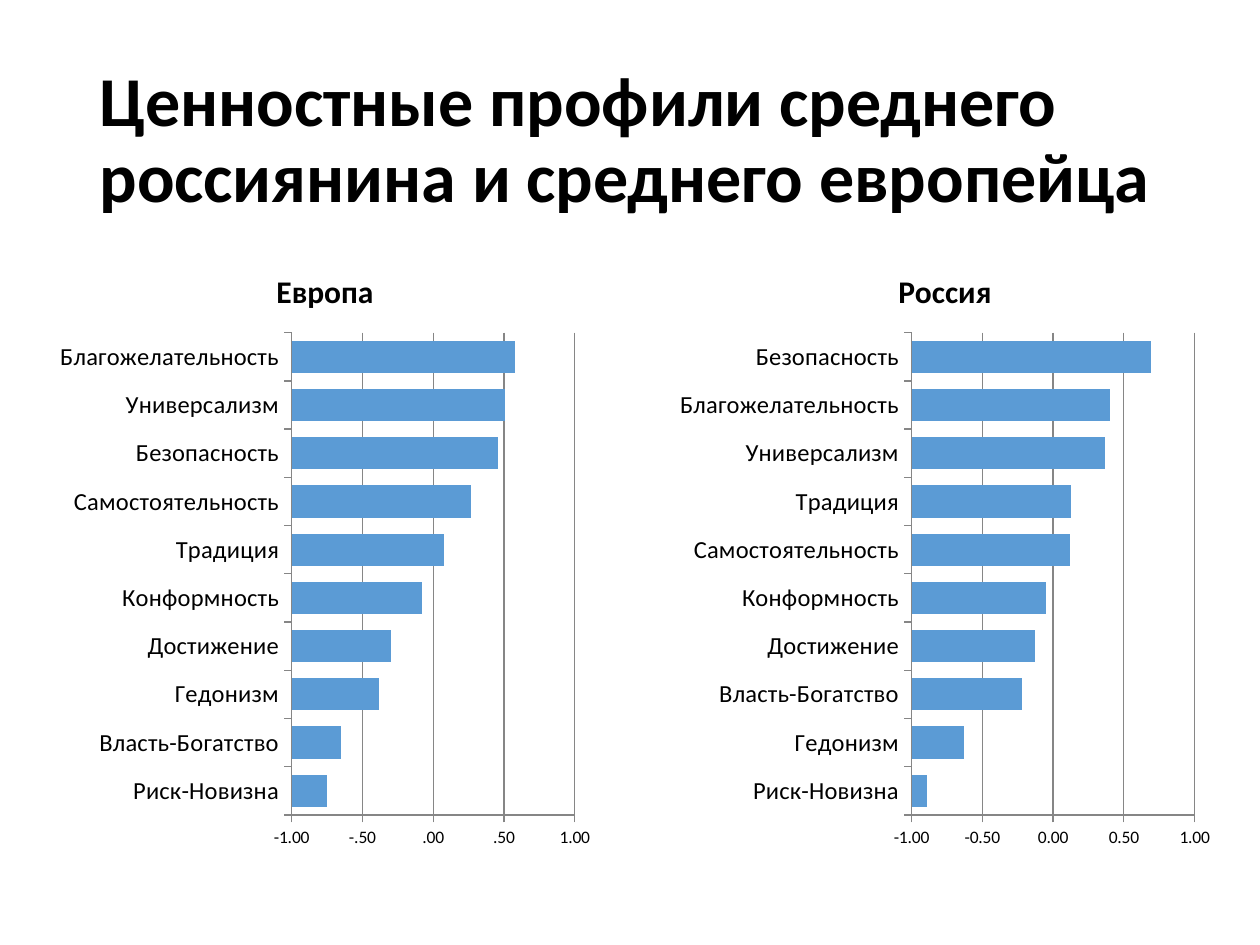
from pptx import Presentation
from pptx.chart.data import CategoryChartData
from pptx.dml.color import RGBColor
from pptx.enum.chart import XL_CHART_TYPE, XL_TICK_LABEL_POSITION, XL_TICK_MARK
from pptx.enum.text import MSO_ANCHOR, PP_ALIGN
from pptx.util import Inches, Pt

BLACK = RGBColor(0x00, 0x00, 0x00)
BLUE = RGBColor(0x5B, 0x9B, 0xD5)
GRAY = RGBColor(0x86, 0x86, 0x86)
FONT = "Calibri"

EUROPE = {
    "Риск-Новизна": -0.75, "Власть-Богатство": -0.65, "Гедонизм": -0.38,
    "Достижение": -0.3, "Конформность": -0.08, "Традиция": 0.08,
    "Самостоятельность": 0.27, "Безопасность": 0.46,
    "Универсализм": 0.51, "Благожелательность": 0.58,
}
RUSSIA = {
    "Риск-Новизна": -0.89, "Гедонизм": -0.63, "Власть-Богатство": -0.22,
    "Достижение": -0.13, "Конформность": -0.05, "Самостоятельность": 0.12,
    "Традиция": 0.13, "Универсализм": 0.37,
    "Благожелательность": 0.4, "Безопасность": 0.69,
}


def style_font(font, size, bold=False):
    font.name = FONT
    font.size = Pt(size)
    font.bold = bold
    font.color.rgb = BLACK


def style_line(line):
    line.color.rgb = GRAY
    line.width = Pt(0.75)


def set_title(slide, text):
    title = slide.shapes.title
    title.left, title.top = Inches(0.69), Inches(0.4)
    title.width, title.height = Inches(8.62), Inches(1.45)
    frame = title.text_frame
    frame.text = text
    frame.word_wrap = True
    frame.vertical_anchor = MSO_ANCHOR.MIDDLE
    paragraph = frame.paragraphs[0]
    paragraph.alignment = PP_ALIGN.LEFT
    paragraph.line_spacing = 0.9
    style_font(paragraph.runs[0].font, 40, bold=True)


def style_axes(chart, number_format):
    """Start the bars at -1, where the category axis crosses the value axis."""
    categories, scale = chart.category_axis, chart.value_axis
    for axis, size in ((categories, 14), (scale, 10)):
        axis.major_tick_mark = XL_TICK_MARK.OUTSIDE
        axis.minor_tick_mark = XL_TICK_MARK.NONE
        axis.tick_label_position = XL_TICK_LABEL_POSITION.LOW
        style_font(axis.tick_labels.font, size)
        style_line(axis.format.line)
    scale.minimum_scale, scale.maximum_scale = -1, 1
    scale.major_unit = 0.5
    scale.crosses_at = -1
    scale.has_major_gridlines = True
    style_line(scale.major_gridlines.format.line)
    scale.tick_labels.number_format = number_format
    scale.tick_labels.number_format_is_linked = False


def add_value_profile(slide, region, profile, left, number_format):
    data = CategoryChartData()
    data.categories = list(profile)
    data.add_series(region, list(profile.values()))
    chart = slide.shapes.add_chart(
        XL_CHART_TYPE.BAR_CLUSTERED, Inches(left), Inches(1.94),
        Inches(4.38), Inches(4.88), data).chart
    style_font(chart.font, 10)
    chart.has_legend = False
    chart.has_title = True
    heading = chart.chart_title.text_frame
    heading.text = region
    style_font(heading.paragraphs[0].runs[0].font, 18, bold=True)
    chart.chart_title.include_in_layout = False

    plot = chart.plots[0]
    plot.gap_width = 50
    plot.vary_by_categories = False
    bars = plot.series[0]
    bars.invert_if_negative = False
    bars.format.fill.solid()
    bars.format.fill.fore_color.rgb = BLUE
    style_axes(chart, number_format)


def main():
    deck = Presentation()
    deck.slide_width, deck.slide_height = Inches(10), Inches(7.5)
    slide = deck.slides.add_slide(deck.slide_layouts[5])
    set_title(slide, "Ценностные профили среднего россиянина и среднего европейца")
    add_value_profile(slide, "Европа", EUROPE, 0.39, "####.00")
    add_value_profile(slide, "Россия", RUSSIA, 5.31, "#,##0.00")
    deck.save("out.pptx")


if __name__ == "__main__":
    main()
